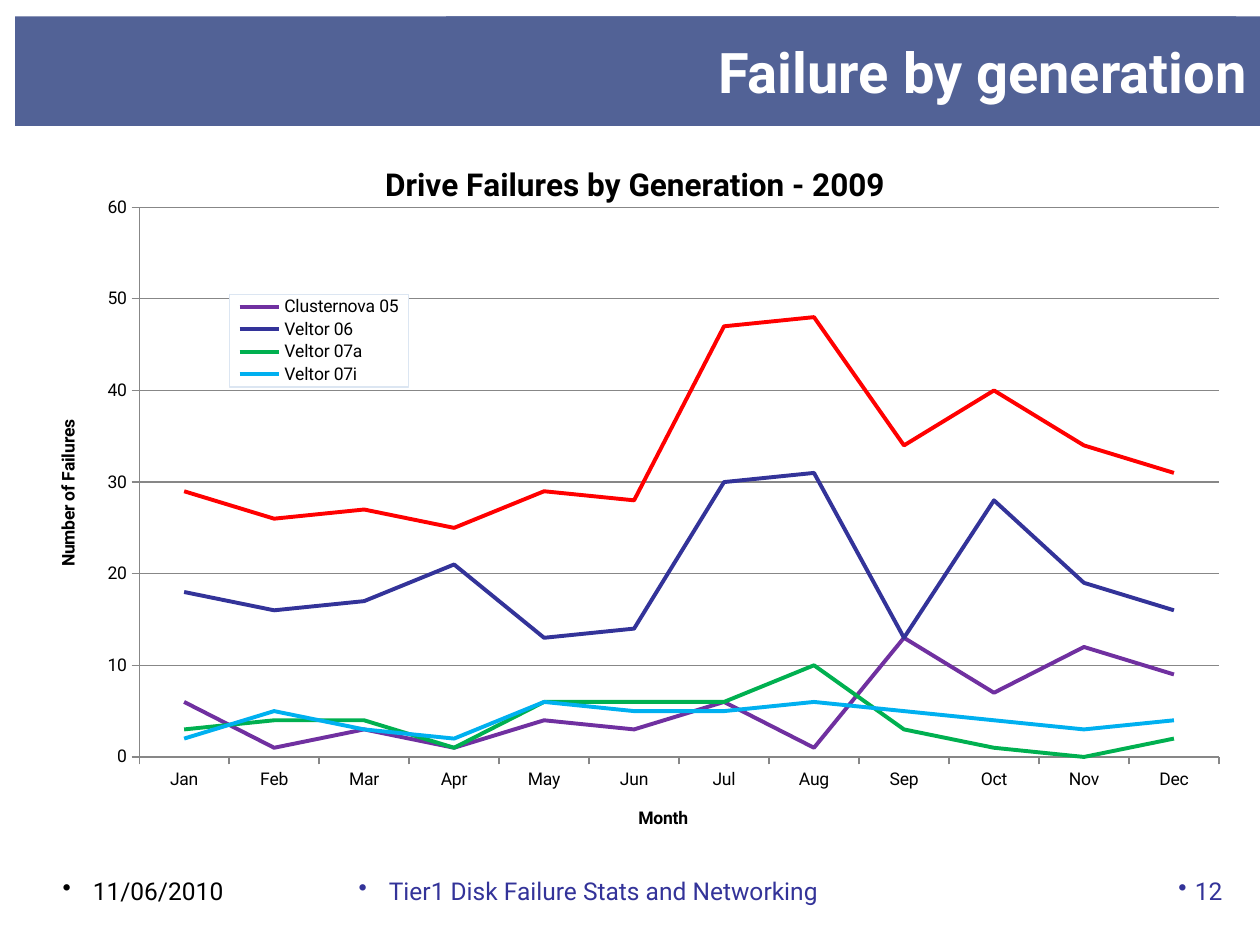
"""Build the slide with the line chart of drive failures by generation."""
from lxml.etree import SubElement
from pptx import Presentation
from pptx.chart.data import CategoryChartData
from pptx.dml.color import RGBColor
from pptx.enum.chart import XL_CHART_TYPE as ChartType, XL_LEGEND_POSITION as LegendPosition
from pptx.enum.shapes import MSO_SHAPE as Shape
from pptx.enum.text import MSO_ANCHOR as Anchor, PP_ALIGN as Align
from pptx.oxml import parse_xml
from pptx.oxml.ns import nsdecls, qn
from pptx.util import Inches, Pt

COLORS = {
    "band": "526296", "white": "FFFFFF", "black": "000000", "navy": "333399",
    "purple": "7030A0", "green": "00B050", "sky": "00B0F0", "red": "FF0000",
    "grid": "878787", "frame": "DCE6F2",
}
MONTHS = "Jan Feb Mar Apr May Jun Jul Aug Sep Oct Nov Dec".split()
SERIES = [
    ("Clusternova 05", "purple", (6, 1, 3, 1, 4, 3, 6, 1, 13, 7, 12, 9)),
    ("Veltor 06", "navy", (18, 16, 17, 21, 13, 14, 30, 31, 13, 28, 19, 16)),
    ("Veltor 07a", "green", (3, 4, 4, 1, 6, 6, 6, 10, 3, 1, 0, 2)),
    ("Veltor 07i", "sky", (2, 5, 3, 2, 6, 5, 5, 6, 5, 4, 3, 4)),
    ("All", "red", (29, 26, 27, 25, 29, 28, 47, 48, 34, 40, 34, 31)),
]
FOOTERS = [
    ("11/06/2010", 0.2, 2.05, Align.CENTER, "black", 0.24, 0, 0.18),
    ("Tier1 Disk Failure Stats and Networking", 2.24, 5.04, Align.CENTER, "navy", 0.24, 0, 0.18),
    ("12", 9.25, 0.55, Align.RIGHT, "navy", 0.13, 0, 0.1),
]


def style_font(font, size, color, bold=False):
    for name, value in {"name": "Roboto", "size": Pt(size), "bold": bold}.items():
        setattr(font, name, value)
    font.color.rgb = RGBColor.from_string(COLORS[color])


def manual_layout(left, top, width, height, inner=False):
    target = '<c:layoutTarget val="inner"/>' if inner else ""
    values = {"x": left, "y": top, "w": width, "h": height}
    modes = "".join(f'<c:{key}Mode val="edge"/>' for key in "xy")
    sizes = "".join(f'<c:{key} val="{value}"/>' for key, value in values.items())
    return parse_xml(
        f'<c:layout {nsdecls("c")}><c:manualLayout>{target}{modes}{sizes}'
        "</c:manualLayout></c:layout>"
    )


deck = Presentation()
deck.slide_width, deck.slide_height = Inches(10), Inches(7.5)
page = deck.slides.add_slide(deck.slide_layouts[5])

title = page.shapes.title
band = page.shapes.add_shape(Shape.RECTANGLE, Inches(0.12), Inches(0.13), Inches(9.69), Inches(0.87))
band.shadow.inherit = False
band.line.fill.background()
title.left, title.top, title.width, title.height = Inches(3.54), Inches(0.13), Inches(6.46), Inches(0.87)
for shape in (band, title):
    shape.fill.solid()
    shape.fill.fore_color.rgb = RGBColor.from_string(COLORS["band"])
title._element.addprevious(band._element)
title.text_frame.text = "Failure by generation"
title.text_frame.vertical_anchor = Anchor.MIDDLE
title.text_frame.paragraphs[0].alignment = Align.RIGHT
style_font(title.text_frame.paragraphs[0].runs[0].font, 32, "white", True)

for text, left, width, align, color, hang, inset_left, inset_right in FOOTERS:
    box = page.shapes.add_textbox(Inches(left), Inches(6.9), Inches(width), Inches(0.39))
    frame = box.text_frame
    frame.word_wrap = True
    frame.margin_left, frame.margin_right = Inches(inset_left), Inches(inset_right)
    para = frame.paragraphs[0]
    para.alignment = align
    props = para._p.get_or_add_pPr()
    props.set("marL", str(Inches(hang)))
    props.set("indent", str(-Inches(hang)))
    SubElement(props, qn("a:buChar")).set("char", "•")
    span = para.add_run()
    span.text = text
    style_font(span.font, 14, color)

data = CategoryChartData()
data.categories = MONTHS
for name, color, values in SERIES:
    data.add_series(name, values)
chart = page.shapes.add_chart(
    ChartType.LINE, Inches(0.31), Inches(1.09), Inches(9.46), Inches(5.66), data
).chart
style_font(chart.font, 10, "black")

category_axis, value_axis = chart.category_axis, chart.value_axis
for owner, text, size in (
    (chart, "Drive Failures by Generation - 2009", 18),
    (category_axis, "Month", 10),
    (value_axis, "Number of Failures", 10),
):
    owner.has_title = True
    heading = (chart.chart_title if owner is chart else owner.axis_title).text_frame
    heading.text = text
    style_font(heading.paragraphs[0].runs[0].font, size, "black", True)

value_axis.minimum_scale, value_axis.maximum_scale, value_axis.major_unit = 0, 60, 10
value_axis.has_major_gridlines = True
for lines in (category_axis, value_axis, value_axis.major_gridlines):
    lines.format.line.color.rgb = RGBColor.from_string(COLORS["grid"])
    lines.format.line.width = Pt(0.75)

for series, (name, color, values) in zip(chart.plots[0].series, SERIES):
    series.smooth = False
    series.format.line.color.rgb = RGBColor.from_string(COLORS[color])
    series.format.line.width = Pt(2.25)

chart.has_legend = True
chart.legend.position = LegendPosition.RIGHT
chart.legend.include_in_layout = True
style_font(chart.legend.font, 10, "black")

root = chart._chartSpace.chart
plot_area = root.find(qn("c:plotArea"))
for layout in plot_area.findall(qn("c:layout")):
    plot_area.remove(layout)
plot_area.insert(0, manual_layout(0.084, 0.098, 0.906, 0.771, inner=True))

legend = root.find(qn("c:legend"))
for layout in legend.findall(qn("c:layout")):
    legend.remove(layout)
hidden_entry = parse_xml(
    f'<c:legendEntry {nsdecls("c")}><c:idx val="{len(SERIES) - 1}"/><c:delete val="1"/></c:legendEntry>'
)
legend.find(qn("c:legendPos")).addnext(hidden_entry)
hidden_entry.addnext(manual_layout(0.16, 0.22, 0.15, 0.13))
legend.find(qn("c:overlay")).addnext(parse_xml(
    f'<c:spPr {nsdecls("c", "a")}>'
    f'<a:solidFill><a:srgbClr val="{COLORS["white"]}"/></a:solidFill>'
    f'<a:ln w="{Pt(0.75)}"><a:solidFill><a:srgbClr val="{COLORS["frame"]}"/></a:solidFill></a:ln></c:spPr>'
))

deck.save("out.pptx")
